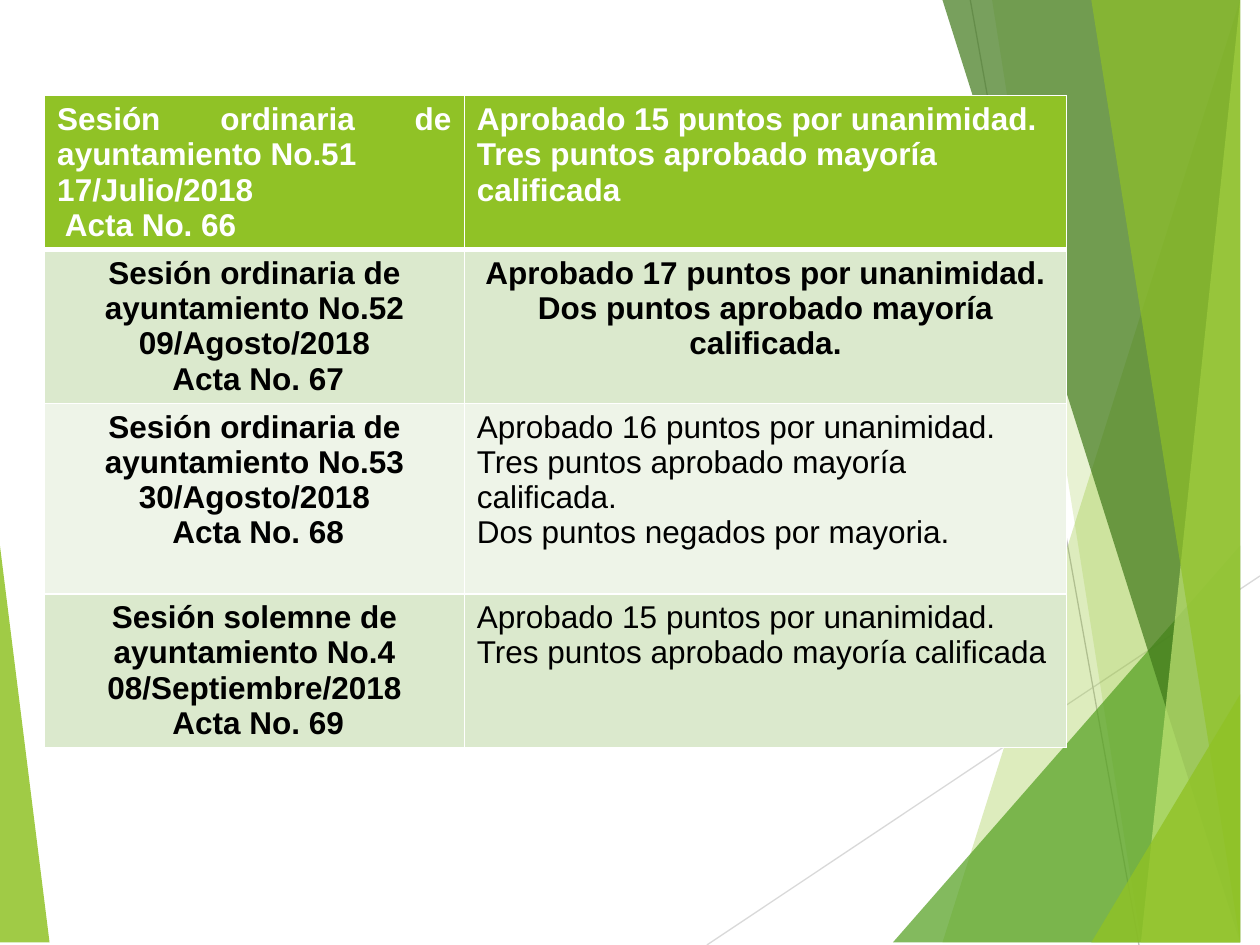
import pptx
import pptx.dml.color
import pptx.enum.shapes
import pptx.enum.text
import pptx.oxml
import pptx.oxml.ns
import pptx.util
from lxml import etree

Cm = pptx.util.Cm
Pt = pptx.util.Pt
AL = pptx.enum.text.PP_ALIGN
W, H = 25.4, 19.05

# Decorative lines: start, end, colour
LINES = [
    ((14.25, H), (W, 11.61), "D9D9D9"),
    ((19.56, 0), (22.96, H), "BFBFBF"),
]

# Decorative facets, back to front: corners in cm, colour, opacity in percent
LEFT_FACET = ([(0, 11.15), (1.24, H), (0, H)], "90C226", 85)
RIGHT_FACETS = [
    ([(24.77, 0), (19.15, H), (W, H), (W, 0)], "90C226", 30),
    ([(20.02, 0), (23.34, H), (W, H), (W, 0)], "90C226", 20),
    ([(18.44, H), (W, 10.9), (W, H)], "54A021", 72),
    ([(19.48, 0), (24.64, H), (W, H), (W, 0)], "3F7819", 70),
    ([(24.92, 0), (23.04, H), (W, H), (W, 0)], "C0E474", 70),
    ([(22.43, 0), (25.04, H), (W, H), (25.35, 0)], "90C226", 65),
    ([(22.38, H), (W, 13.59), (W, H)], "90C226", 80),
]

COL_WIDTHS = [8.46, 12.14]
# Row height, fill, text colour, alignment and boldness of each column
HEADER = (3.1, "90C226", "FFFFFF", (AL.JUSTIFY, AL.LEFT), (True, True))
CENTRED = (3.1, "DBE9CD", "000000", (AL.CENTER, AL.CENTER), (True, True))
LIGHT = (3.84, "EEF4E8", "000000", (AL.CENTER, AL.LEFT), (True, False))
DARK = (3.1, "DBE9CD", "000000", (AL.CENTER, AL.LEFT), (True, False))

# Sessions: row format, session column, result column
SESSIONS = [
    (HEADER,
     ["Sesión ordinaria de ayuntamiento No.51", "17/Julio/2018", " Acta No. 66"],
     ["Aprobado 15 puntos por unanimidad.",
      "Tres puntos aprobado mayoría calificada"]),
    (CENTRED,
     ["Sesión ordinaria de ayuntamiento No.52", "09/Agosto/2018", " Acta No. 67"],
     ["Aprobado 17 puntos por unanimidad.",
      "Dos puntos aprobado mayoría calificada."]),
    (LIGHT,
     ["Sesión ordinaria de ayuntamiento No.53", "30/Agosto/2018", " Acta No. 68"],
     ["Aprobado 16 puntos por unanimidad.",
      "Tres puntos aprobado mayoría calificada.",
      "Dos puntos negados por mayoria."]),
    (DARK,
     ["Sesión solemne de ayuntamiento No.4", "08/Septiembre/2018", " Acta No. 69"],
     ["Aprobado 15 puntos por unanimidad.",
      "Tres puntos aprobado mayoría calificada"]),
]


def rgb(hex_colour):
    return pptx.dml.color.RGBColor.from_string(hex_colour)


def set_fill(obj, colour):
    obj.fill.solid()
    obj.fill.fore_color.rgb = rgb(colour)


def add_line(s, start, end, colour):
    sp = s.shapes.add_connector(
        pptx.enum.shapes.MSO_CONNECTOR.STRAIGHT,
        *(Cm(v) for v in start + end))
    sp.line.color.rgb = rgb(colour)
    sp.line.width = Pt(0.75)
    etree.SubElement(sp._element.spPr, pptx.oxml.ns.qn("a:effectLst"))


def add_facet(s, corners, colour, opacity):
    builder = s.shapes.build_freeform(*corners[0], scale=Cm(1))
    builder.add_line_segments(corners[1:], close=True)
    sp = builder.convert_to_shape()
    sp.shadow.inherit = False
    set_fill(sp, colour)
    sp.line.fill.background()
    clr = sp._element.spPr.find(".//" + pptx.oxml.ns.qn("a:srgbClr"))
    alpha = etree.SubElement(clr, pptx.oxml.ns.qn("a:alpha"))
    alpha.set("val", str(opacity * 1000))


def set_borders(cell, widths):
    # Border elements come before the fill in the cell properties
    tc_pr = cell._tc.get_or_add_tcPr()
    for i, (side, width) in enumerate(widths.items()):
        tc_pr.insert(i, pptx.oxml.parse_xml(
            f'<a:ln{side} {pptx.oxml.ns.nsdecls("a")} w="{Pt(width)}">'
            '<a:solidFill><a:srgbClr val="FFFFFF"/></a:solidFill>'
            f'</a:ln{side}>'))


def write_cell(cell, lines, colour, align, bold):
    font = {"name": "Arial", "size": Pt(18), "bold": bold}
    tf = cell.text_frame
    for i, line in enumerate(lines):
        p = tf.add_paragraph() if i else tf.paragraphs[0]
        p.alignment = align
        r = p.add_run()
        r.text = line
        for name, value in font.items():
            setattr(r.font, name, value)
        r.font.color.rgb = rgb(colour)


def add_sessions_table(s):
    heights = [fmt[0] for fmt, *_ in SESSIONS]
    table = s.shapes.add_table(
        len(SESSIONS), len(COL_WIDTHS), Cm(0.9), Cm(1.93),
        Cm(sum(COL_WIDTHS)), Cm(sum(heights))).table
    for col, width in zip(table.columns, COL_WIDTHS):
        col.width = Cm(width)
    for i, (fmt, *texts) in enumerate(SESSIONS):
        height, fill, colour, aligns, bolds = fmt
        table.rows[i].height = Cm(height)
        # A thick rule separates the header from the rows below
        widths = {"L": 1, "R": 1, "T": 3 if i == 1 else 1, "B": 3 if i == 0 else 1}
        for j, lines in enumerate(texts):
            cell = table.cell(i, j)
            write_cell(cell, lines, colour, aligns[j], bolds[j])
            set_fill(cell, fill)
            set_borders(cell, widths)


def main():
    prs = pptx.Presentation()
    prs.slide_width, prs.slide_height = Cm(W), Cm(H)
    s = prs.slides.add_slide(prs.slide_layouts[6])

    # Background decoration
    add_facet(s, *LEFT_FACET)
    for line in LINES:
        add_line(s, *line)
    for facet in RIGHT_FACETS:
        add_facet(s, *facet)

    # Session results
    add_sessions_table(s)
    prs.save("out.pptx")


if __name__ == "__main__":
    main()
